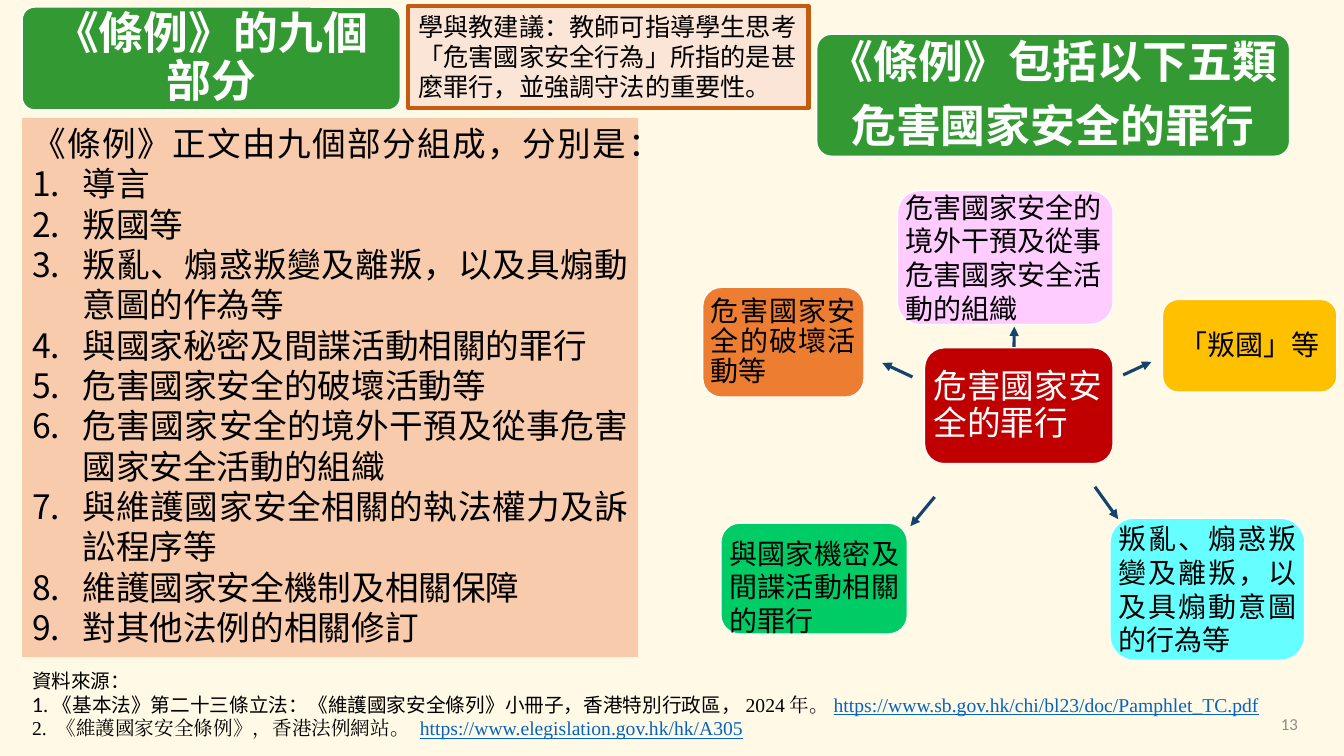
from lxml import etree
from pptx import Presentation
from pptx.dml.color import RGBColor
from pptx.enum.shapes import MSO_CONNECTOR, MSO_SHAPE
from pptx.enum.text import MSO_ANCHOR, PP_ALIGN
from pptx.oxml.ns import qn
from pptx.util import Inches, Pt

COLORS = {
    "page": "FFF9E6", "black": "000000", "white": "FFFFFF", "grey": "8C8C8C",
    "banner": "339933", "list": "F8CBAD", "note": "FBE5D6", "note_edge": "C55A11",
    "arrow": "14446E", "link": "0563C1", "red": "C00000", "pink": "FFCCFF",
    "yellow": "FFC000", "cyan": "66FFFF", "green": "00CC66", "orange": "ED7D31",
}
LATO, NOTO, TIMES = "Lato", "Noto Sans CJK SC", "Times New Roman"
LEFT, CENTER, RIGHT, JUSTIFY = (
    PP_ALIGN.LEFT, PP_ALIGN.CENTER, PP_ALIGN.RIGHT, PP_ALIGN.JUSTIFY)


class SlideBuilder:
    def __init__(self, slide):
        self.slide = slide
        slide.background.fill.solid()
        slide.background.fill.fore_color.rgb = self.color("page")

    def color(self, name):
        return RGBColor.from_string(COLORS[name])

    def fill_text(self, frame, paragraphs, size, color="black", align=LEFT,
                  leading=1.2, gap=0, bold=False):
        """Fill a frame; each paragraph is a list of (text, font[, color]) runs."""
        frame.word_wrap = True
        for index, runs in enumerate(paragraphs):
            paragraph = frame.paragraphs[0] if index == 0 else frame.add_paragraph()
            paragraph.alignment = align
            paragraph.line_spacing = Pt(round(size * leading, 1))
            if index < len(paragraphs) - 1:
                paragraph.space_after = Pt(gap)
            for text, face, *run_color in runs:
                run = paragraph.add_run()
                run.text = text
                font = run.font
                font.size, font.bold, font.name = Pt(size), bold, face
                font.color.rgb = self.color(run_color[0] if run_color else color)
                if run_color == ["link"]:
                    font.underline = True
                east_asian = etree.SubElement(run._r.get_or_add_rPr(), qn("a:ea"))
                east_asian.set("typeface", face)

    def text(self, place, paragraphs, size, anchor=MSO_ANCHOR.TOP, **style):
        frame = self.slide.shapes.add_textbox(*map(Inches, place)).text_frame
        frame.vertical_anchor = anchor
        self.fill_text(frame, paragraphs, size, **style)

    def shape(self, preset, place, fill, edge=None, edge_width=1):
        shape = self.slide.shapes.add_shape(preset, *map(Inches, place))
        shape.shadow.inherit = False
        shape.fill.solid()
        shape.fill.fore_color.rgb = self.color(fill)
        if edge:
            shape.line.color.rgb = self.color(edge)
            shape.line.width = Pt(edge_width)
        else:
            shape.line.fill.background()
        return shape

    def panel(self, place, fill, paragraphs, size, edge=None, edge_width=1, **style):
        frame = self.shape(MSO_SHAPE.RECTANGLE, place, fill, edge, edge_width).text_frame
        frame.vertical_anchor = MSO_ANCHOR.TOP
        self.fill_text(frame, paragraphs, size, **style)
        return frame

    def card(self, place, fill, lines, size, face=LATO, inset=0.08, drop=0,
             corner=0.17, **style):
        """Rounded box; the inset allows for the room its corners already take."""
        box = self.shape(MSO_SHAPE.ROUNDED_RECTANGLE, place, fill, "white")
        box.adjustments[0] = corner
        frame = box.text_frame
        side = Inches(max(0, inset - 0.29 * corner * min(place[2:])))
        frame.margin_left = frame.margin_right = side
        frame.margin_top, frame.margin_bottom = Inches(drop), 0
        frame.vertical_anchor = MSO_ANCHOR.MIDDLE
        self.fill_text(frame, [[(line, face)] for line in lines], size, **style)

    def arrow(self, *ends):
        arrow = self.slide.shapes.add_connector(
            MSO_CONNECTOR.STRAIGHT, *map(Inches, ends))
        arrow.line.color.rgb = self.color("arrow")
        arrow.line.width = Pt(2.25)
        properties = arrow._element.spPr
        etree.SubElement(properties.find(qn("a:ln")), qn("a:tailEnd"), type="triangle")
        etree.SubElement(properties, qn("a:effectLst"))

    def number(self, paragraphs):
        for paragraph in paragraphs:
            properties = paragraph._p.get_or_add_pPr()
            properties.set("marL", str(Inches(0.5)))
            properties.set("indent", str(-Inches(0.5)))
            etree.SubElement(properties, qn("a:buFont"), typeface=LATO)
            etree.SubElement(properties, qn("a:buAutoNum"), type="arabicPeriod")


PARTS = [
    "導言",
    "叛國等",
    "叛亂、煽惑叛變及離叛，以及具煽動意圖的作為等",
    "與國家秘密及間諜活動相關的罪行",
    "危害國家安全的破壞活動等",
    "危害國家安全的境外干預及從事危害國家安全活動的組織",
    "與維護國家安全相關的執法權力及訴訟程序等",
    "維護國家安全機制及相關保障",
    "對其他法例的相關修訂",
]
SOURCES = [
    [("資料來源：", LATO)],
    [("1.", LATO), ("《基本法》第二十三條立法", NOTO), ("：", LATO),
     ("《維護國家安全條列》", NOTO), ("小冊子", LATO), ("，香港特別行政區，", NOTO),
     ("2024年。", TIMES),
     ("https://www.sb.gov.hk/chi/bl23/doc/Pamphlet_TC.pdf", TIMES, "link")],
    [("2. 《維護國家安全條例》，香港法例網站。 ", TIMES),
     ("https://www.elegislation.gov.hk/hk/A305", TIMES, "link")],
]
ADVICE = [[
    ("學與教建議：教師可指導學生思考", NOTO), ("「", LATO), ("危害國家安全行為", NOTO),
    ("」所指的是甚麼罪行，並強調守法的重要性。", LATO),
]]
ARROWS = [
    (10.05, 3.91, 10.06, 3.24),
    (11.14, 3.72, 11.42, 3.59),
    (10.86, 4.83, 11.09, 5.15),
    (9.27, 4.93, 9.03, 5.22),
    (9.05, 3.74, 8.75, 3.6),
]
OFFENCES = [
    ((8.9, 1.89, 2.14, 1.33), "pink",
     "危害國家安全的境外干預及從事危害國家安全活動的組織", {}),
    ((11.53, 2.97, 1.73, 0.92), "yellow", "「叛國」等",
     {"align": CENTER, "face": NOTO, "leading": 1.08}),
    ((11.01, 5.14, 1.93, 1.41), "cyan",
     "叛亂、煽惑叛變及離叛，以及具煽動意圖的行為等", {"align": JUSTIFY}),
    ((7.15, 5.19, 1.85, 1.1), "green", "與國家機密及間諜活動相關的罪行",
     {"align": JUSTIFY, "drop": 0.16}),
    ((6.97, 2.85, 1.6, 1.09), "orange", "危害國家安全的破壞活動等",
     {"align": JUSTIFY, "leading": 1.08}),
]
BANNERS = [
    ((0.22, 0.07, 3.75, 1.02), ["《條例》的九個部分"], 0.12),
    ((8.1, 0.34, 4.69, 1.21), ["《條例》包括以下五類", "危害國家安全的罪行"], 0.08),
]


def main():
    deck = Presentation()
    deck.slide_width, deck.slide_height = Inches(13.33), Inches(7.5)
    page = SlideBuilder(deck.slides.add_slide(deck.slide_layouts[6]))

    page.text((9.97, 6.98, 3, 0.4), [[("13", "Calibri")]], 12, MSO_ANCHOR.MIDDLE,
              color="grey", align=RIGHT)
    intro = [("《條例》正文由九個部分組成，分別是", NOTO), ("：", LATO)]
    contents = page.panel((0.22, 1.17, 6.11, 5.35), "list",
                          [intro] + [[(part, NOTO)] for part in PARTS],
                          24, align=JUSTIFY)
    page.number(contents.paragraphs[1:])
    page.text((0.22, 6.59, 12.57, 0.81), SOURCES, 14)

    for ends in ARROWS:
        page.arrow(*ends)
    page.card((9.17, 3.45, 1.87, 1.15), "red", ["危害國家安全的罪行"], 24,
              color="white", inset=0.09, leading=1.08)
    for place, fill, offence, style in OFFENCES:
        page.card(place, fill, [offence], 20, **style)

    for place, lines, inset in BANNERS:
        page.card(place, "banner", lines, 32, inset=inset, corner=0.12,
                  color="white", align=CENTER, leading=1.08, gap=11, bold=True)
    page.panel((4.05, 0.06, 3.97, 1.01), "note", ADVICE, 18,
               edge="note_edge", edge_width=3)
    deck.save("out.pptx")


if __name__ == "__main__":
    main()
